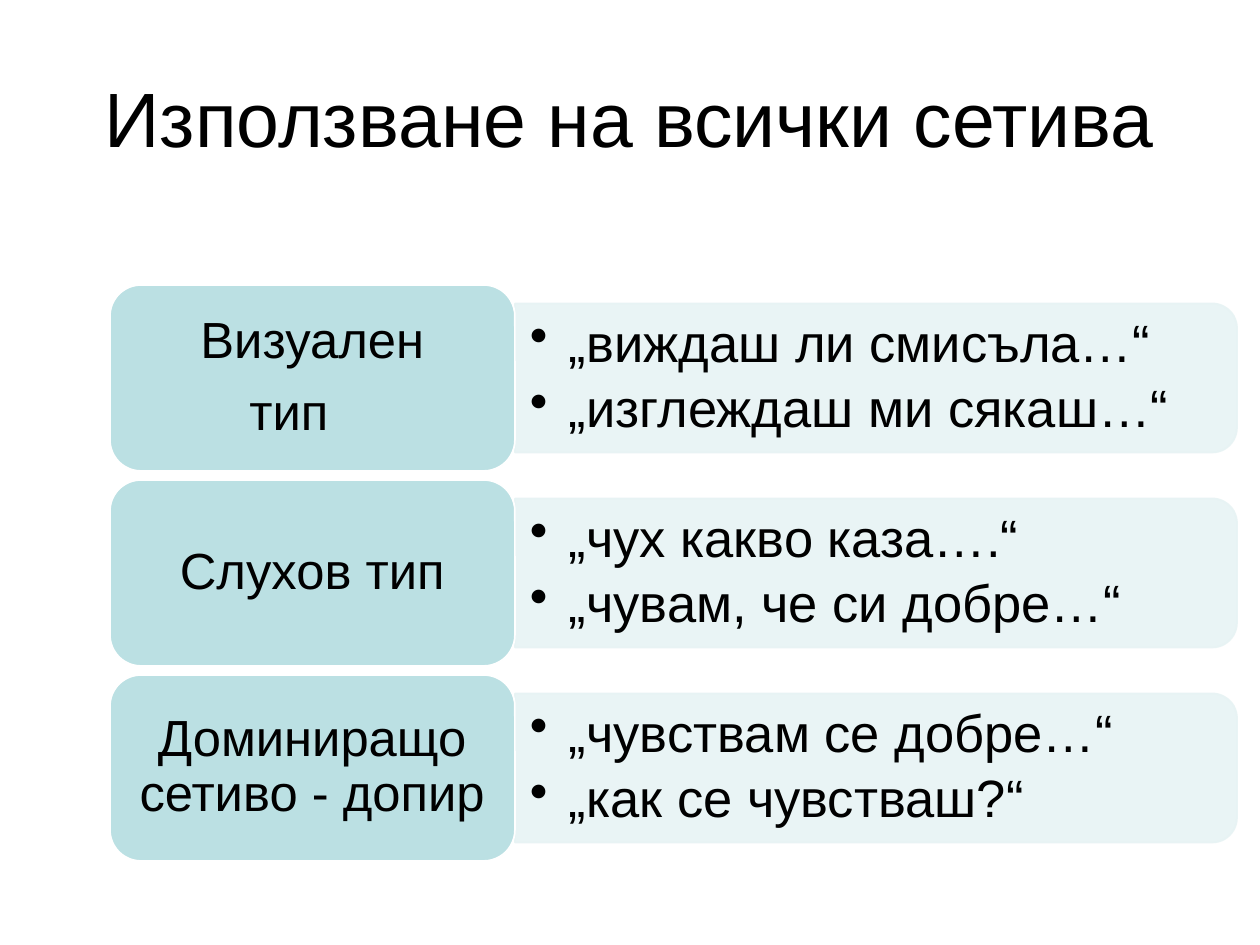
from lxml import etree
from pptx import Presentation
from pptx.dml.color import RGBColor
from pptx.enum.shapes import MSO_SHAPE as Shape
from pptx.enum.text import MSO_ANCHOR as Anchor, PP_ALIGN as Align
from pptx.oxml.ns import qn
from pptx.util import Pt

PX = 914400 / 126
FONT = "Arial"
BLACK, WHITE, TEAL, PALE = "000000", "FFFFFF", "BBE0E3", "E7F3F4"

LEFT, TOP, PITCH = 110, 285, 195
LABEL_W, LABEL_H = 405, 186
PANEL_W, PANEL_H = 722, 149
LIST_W, LIST_H = 714, 135
INDENT = 39

ROWS = [
    (["Визуален", "тип\t"],
     ["„виждаш ли смисъла…“", "„изглеждаш ми сякаш…“"]),
    (["Слухов тип"],
     ["„чух какво каза….“", "„чувам, че си добре…“"]),
    (["Доминиращо сетиво - допир"],
     ["„чувствам се добре…“", "„как се чувстваш?“"]),
]


def px(*nums):
    return [round(n * PX) for n in nums]


def rgb(code):
    return RGBColor.from_string(code)


def style(para, size, align):
    para.alignment = align
    font = para.font
    font.name, font.size = FONT, Pt(size)
    font.color.rgb = rgb(BLACK)


def add_bullet(para):
    para.level = 1
    props = para._p.get_or_add_pPr()
    indent, = px(INDENT)
    props.set("marL", str(indent))
    props.set("indent", str(-indent))
    etree.SubElement(props, qn("a:buChar"), char="•")


def write(frame, lines, size, align, after, bullets=False):
    frame.word_wrap = True
    frame.vertical_anchor = Anchor.MIDDLE
    frame.margin_left, frame.margin_right = px(15, 15)
    frame.margin_top, frame.margin_bottom = px(8, 8)
    for i, line in enumerate(lines):
        para = frame.paragraphs[0] if i == 0 else frame.add_paragraph()
        para.text = line
        if bullets:
            add_bullet(para)
        para.line_spacing = 0.9
        para.space_after = Pt(after)
        style(para, size, align)


def add_block(slide, kind, box, fill, line):
    block = slide.shapes.add_shape(kind, *px(*box))
    block.shadow.inherit = False
    block.fill.solid()
    block.fill.fore_color.rgb = rgb(fill)
    block.line.color.rgb = rgb(line)
    block.line.width = Pt(1)
    return block


def add_panel(slide, left, mid):
    """Tall shape turned a quarter, so its round corners face right."""
    box = (left + (PANEL_W - PANEL_H) / 2, mid - PANEL_W / 2, PANEL_H, PANEL_W)
    panel = add_block(slide, Shape.ROUND_2_SAME_RECTANGLE, box, PALE, PALE)
    panel.rotation = 90
    for color in panel._element.spPr.iter(qn("a:srgbClr")):
        etree.SubElement(color, qn("a:alpha"), val="90000")


def add_row(slide, top, label, quotes):
    mid = top + LABEL_H / 2
    right = LEFT + LABEL_W
    add_panel(slide, right, mid)
    box = slide.shapes.add_textbox(*px(right, mid - LIST_H / 2, LIST_W, LIST_H))
    write(box.text_frame, quotes, 30, Align.LEFT, 5, bullets=True)
    card = add_block(slide, Shape.ROUNDED_RECTANGLE,
                     (LEFT, top, LABEL_W, LABEL_H), TEAL, WHITE)
    write(card.text_frame, label, 29, Align.CENTER, 10)


def add_title(slide, text):
    title = slide.shapes.title
    title.left, title.top, title.width, title.height = px(63, 38, 1134, 158)
    title.text_frame.text = text
    title.text_frame.vertical_anchor = Anchor.MIDDLE
    style(title.text_frame.paragraphs[0], 44, Align.CENTER)


def main():
    deck = Presentation()
    deck.slide_width, deck.slide_height = px(1260, 945)
    slide = deck.slides.add_slide(deck.slide_layouts[5])
    add_title(slide, "Използване на всички сетива")
    for i, (label, quotes) in enumerate(ROWS):
        add_row(slide, TOP + i * PITCH, label, quotes)
    deck.save("out.pptx")


if __name__ == "__main__":
    main()
